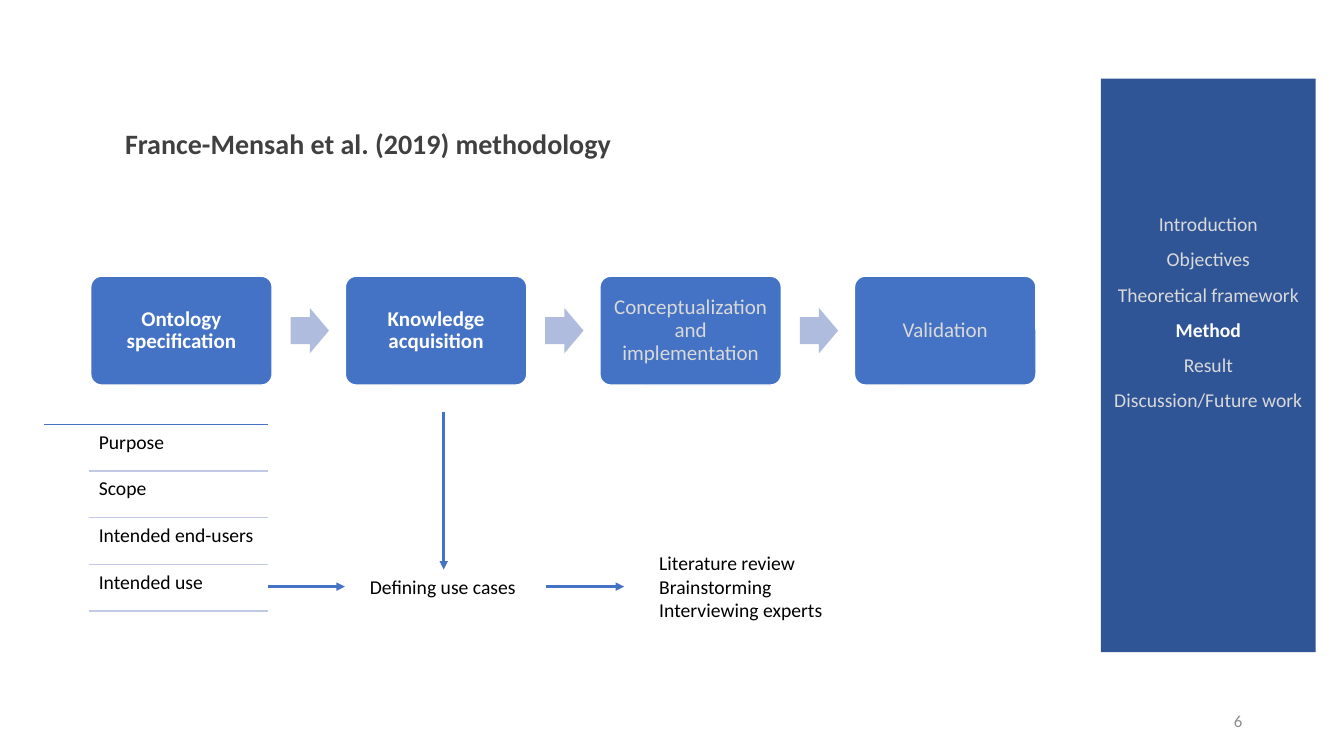
from lxml import etree
from pptx import Presentation
from pptx.dml.color import RGBColor
from pptx.enum import shapes, text
from pptx.oxml import ns
from pptx.util import Inches, Pt

TITLE = "France-Mensah et al. (2019) methodology"
STEPS = [("Ontology specification", True), ("Knowledge acquisition", True),
         ("Conceptualization and implementation", False), ("Validation", False)]
SPECIFICATION = ["Purpose", "Scope", "Intended end-users", "Intended use"]
USE_CASES = ["Defining use cases"]
SOURCES = ["Literature review", "Brainstorming", "Interviewing experts"]
SECTIONS = ["Introduction", "Objectives", "Theoretical framework", "Method",
            "Result", "Discussion/Future work"]
CURRENT_SECTION = "Method"
PAGE = "6"
FLOW_ARROWS = [(2.66, 5.82, 3.42, 5.82), (4.4, 4.09, 4.4, 5.65), (5.42, 5.82, 6.19, 5.82)]

FONT = "Calibri"
BLUE = RGBColor(0x44, 0x72, 0xC4)
NAVY = RGBColor(0x2F, 0x55, 0x97)
PALE_ARROW = RGBColor(0xB0, 0xBC, 0xDE)
PALE_RULE = RGBColor(0xC1, 0xC9, 0xE4)
WHITE = RGBColor(0xFF, 0xFF, 0xFF)
LIGHT_GREY = RGBColor(0xD9, 0xD9, 0xD9)
MID_GREY = RGBColor(0x8C, 0x8C, 0x8C)
DARK_GREY = RGBColor(0x40, 0x40, 0x40)
BLACK = RGBColor(0, 0, 0)

LEFT, CENTER, RIGHT = text.PP_ALIGN.LEFT, text.PP_ALIGN.CENTER, text.PP_ALIGN.RIGHT
TOP, MIDDLE = text.MSO_ANCHOR.TOP, text.MSO_ANCHOR.MIDDLE

STEP_LEFT, STEP_TOP, STEP_PITCH = 0.9, 2.74, 2.525
STEP_WIDTH, STEP_HEIGHT = 1.8, 1.08
ARROW_WIDTH, ARROW_HEIGHT = 0.38, 0.45
LIST_LEFT, LIST_RIGHT, LIST_TOP, LIST_PITCH = 0.88, 2.66, 4.21, 0.4625


def write(shape, lines, size, color, bold=False, align=LEFT, anchor=TOP,
          insets=(0.1, 0.05), spacing=1.0, wrap=True):
    frame = shape.text_frame
    frame.text = "\n".join(lines)
    frame.word_wrap = wrap
    frame.auto_size = text.MSO_AUTO_SIZE.NONE
    frame.vertical_anchor = anchor
    frame.margin_left = frame.margin_right = Inches(insets[0])
    frame.margin_top = frame.margin_bottom = Inches(insets[1])
    for paragraph in frame.paragraphs:
        paragraph.alignment = align
        paragraph.line_spacing = spacing
        for run in paragraph.runs:
            run.font.name = FONT
            run.font.size = Pt(size)
            run.font.bold = bold
            run.font.color.rgb = color


def add_text(slide, box, lines, size, color, **style):
    write(slide.shapes.add_textbox(*map(Inches, box)), lines, size, color, **style)


def add_block(slide, kind, box, fill):
    shape = slide.shapes.add_shape(kind, *map(Inches, box))
    shape.shadow.inherit = False
    shape.fill.solid()
    shape.fill.fore_color.rgb = fill
    shape.line.fill.background()
    return shape


def add_line(slide, ends, color, width, arrow=False):
    line = slide.shapes.add_connector(shapes.MSO_CONNECTOR.STRAIGHT, *map(Inches, ends))
    line.line.color.rgb = color
    line.line.width = Pt(width)
    if arrow:
        etree.SubElement(line.line._get_or_add_ln(), ns.qn("a:tailEnd"), type="triangle")
    etree.SubElement(line._element.spPr, ns.qn("a:effectLst"))


def add_title(slide):
    title = slide.shapes.title
    title.left, title.top, title.width, title.height = map(Inches, (1.14, 1.22, 9.23, 0.45))
    write(title, [TITLE], 20, DARK_GREY, bold=True, anchor=MIDDLE, spacing=0.9)


def add_steps(slide):
    gap = STEP_PITCH - STEP_WIDTH
    for index, (label, active) in enumerate(STEPS):
        left = STEP_LEFT + index * STEP_PITCH
        card = add_block(slide, shapes.MSO_SHAPE.ROUNDED_RECTANGLE,
                         (left, STEP_TOP, STEP_WIDTH, STEP_HEIGHT), BLUE)
        card.adjustments[0] = 0.1
        card.line.color.rgb = WHITE
        card.line.width = Pt(1)
        write(card, [label], 15, WHITE if active else LIGHT_GREY, bold=active,
              align=CENTER, anchor=MIDDLE, insets=(0.09, 0.06), spacing=0.9)
        if index < len(STEPS) - 1:
            arrow = add_block(slide, shapes.MSO_SHAPE.RIGHT_ARROW,
                              (left + STEP_WIDTH + (gap - ARROW_WIDTH) / 2 + 0.01,
                               STEP_TOP + (STEP_HEIGHT - ARROW_HEIGHT) / 2,
                               ARROW_WIDTH, ARROW_HEIGHT), PALE_ARROW)
            arrow.adjustments[0] = 0.6
            arrow.adjustments[1] = 0.5


def add_specification(slide):
    add_line(slide, (0.44, LIST_TOP, LIST_RIGHT, LIST_TOP), BLUE, 1)
    for index, label in enumerate(SPECIFICATION):
        top = LIST_TOP + index * LIST_PITCH
        bottom = top + LIST_PITCH
        add_text(slide, (0.92, top + 0.02, 1.74, 0.44), [label], 14, BLACK,
                 insets=(0.06, 0.06), spacing=0.9)
        add_line(slide, (LIST_LEFT, bottom, LIST_RIGHT, bottom), PALE_RULE, 1)


def add_section_panel(slide):
    panel = add_block(slide, shapes.MSO_SHAPE.RECTANGLE, (10.92, 0.78, 2.13, 5.69), NAVY)
    write(panel, SECTIONS, 14, LIGHT_GREY, align=CENTER, spacing=0.9)
    panel.text_frame.margin_top = Inches(1.35)
    for index, paragraph in enumerate(panel.text_frame.paragraphs):
        if index:
            paragraph.space_before = Pt(10)
        if paragraph.text == CURRENT_SECTION:
            paragraph.runs[0].font.bold = True
            paragraph.runs[0].font.color.rgb = WHITE


def main():
    presentation = Presentation()
    presentation.slide_width, presentation.slide_height = Inches(13.33), Inches(7.5)
    slide = presentation.slides.add_slide(presentation.slide_layouts[5])
    add_title(slide)
    add_section_panel(slide)
    add_steps(slide)
    add_specification(slide)
    add_text(slide, (3.57, 5.65, 1.66, 0.34), USE_CASES, 14, BLACK, wrap=False)
    for ends in FLOW_ARROWS:
        add_line(slide, ends, BLUE, 2, arrow=True)
    add_text(slide, (6.44, 5.42, 1.84, 0.81), SOURCES, 14, BLACK, wrap=False)
    add_text(slide, (9.42, 6.95, 3, 0.4), [PAGE], 12, MID_GREY, align=RIGHT, anchor=MIDDLE)
    presentation.save("out.pptx")


if __name__ == "__main__":
    main()
